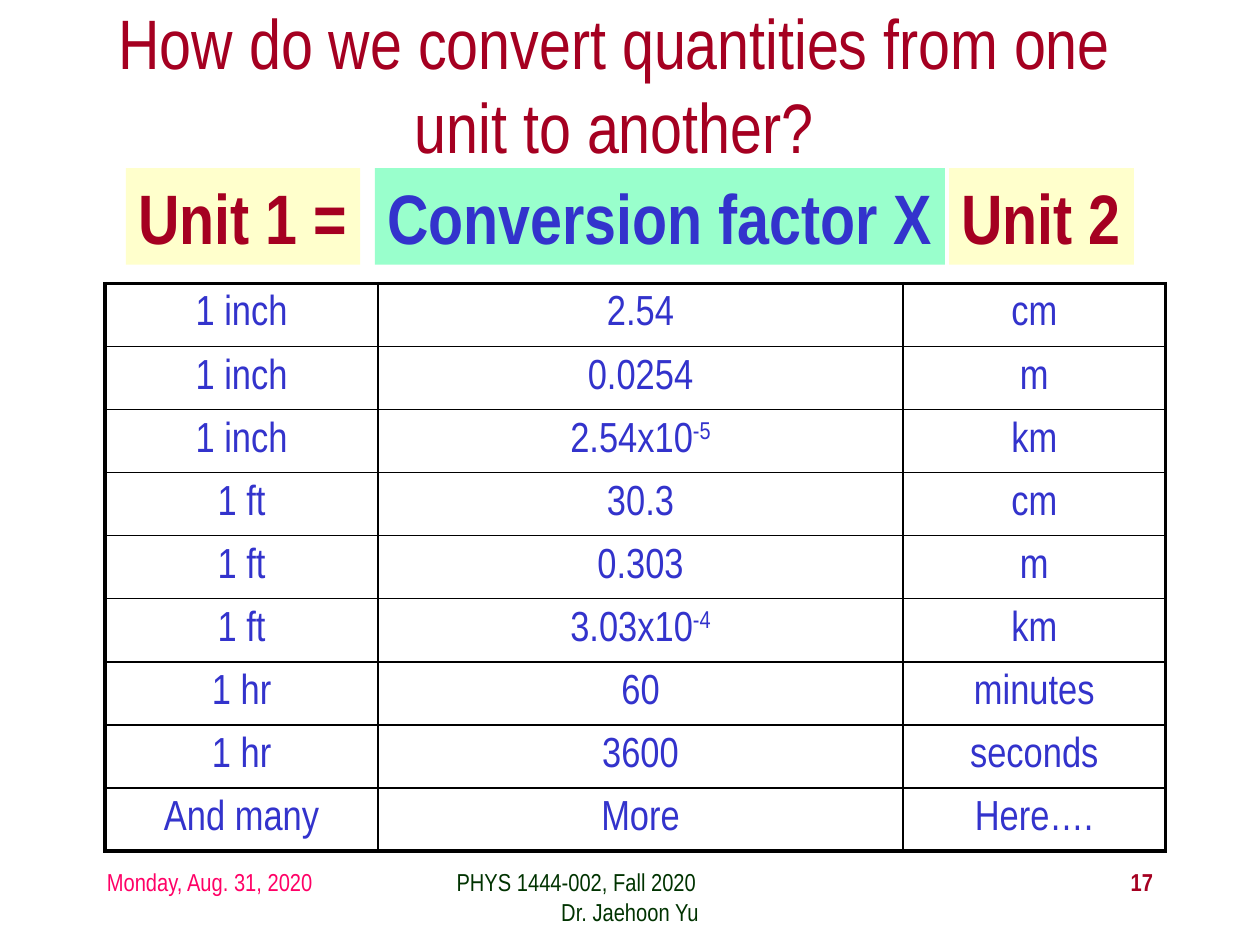
from dataclasses import dataclass

import lxml.etree
import pptx
import pptx.dml.color
import pptx.enum.shapes
import pptx.enum.text
import pptx.oxml.ns
import pptx.util

EMU_PER_PX = 7620
FONT = "Arial Narrow"
ALIGN = pptx.enum.text.PP_ALIGN
ANCHOR = pptx.enum.text.MSO_ANCHOR
AUTO_SIZE = pptx.enum.text.MSO_AUTO_SIZE
COLORS = {
    "red": "A50021",
    "blue": "3333CC",
    "pink": "FF0066",
    "green": "003300",
    "cream": "FFFFCC",
    "mint": "99FFCC",
    "black": "000000",
}


@dataclass(frozen=True)
class Frame:
    left: int
    top: int
    width: int
    height: int


@dataclass(frozen=True)
class Line:
    text: str
    align: ALIGN = ALIGN.LEFT
    indent: int = 0


@dataclass(frozen=True)
class FooterText:
    frame: Frame
    lines: tuple[Line, ...]
    color: str
    bold: bool = False


@dataclass(frozen=True)
class FormulaBox:
    text: str
    left: int
    width: int
    fill: str
    color: str


@dataclass(frozen=True)
class Conversion:
    unit: str
    factor: str
    target: str
    exponent: str = ""


FOOTER = (
    FooterText(Frame(90, 820, 250, 60), (Line("Monday, Aug. 31, 2020"),), "pink"),
    FooterText(
        Frame(410, 820, 380, 60),
        (
            Line("PHYS 1444-002, Fall 2020", indent=13),
            Line("Dr. Jaehoon Yu", ALIGN.CENTER),
        ),
        "green",
    ),
    FooterText(Frame(860, 820, 250, 60), (Line("17", ALIGN.RIGHT),), "red", True),
)
FORMULA = (
    FormulaBox("Unit 1 =", 120, 223, "cream", "red"),
    FormulaBox("Unit 2", 904, 176, "cream", "red"),
    FormulaBox("Conversion factor X", 357, 543, "mint", "blue"),
)
CONVERSIONS = (
    Conversion("1 inch", "2.54", "cm"),
    Conversion("1 inch", "0.0254", "m"),
    Conversion("1 inch", "2.54x10", "km", "-5"),
    Conversion("1 ft", "30.3", "cm"),
    Conversion("1 ft", "0.303", "m"),
    Conversion("1 ft", "3.03x10", "km", "-4"),
    Conversion("1 hr", "60", "minutes"),
    Conversion("1 hr", "3600", "seconds"),
    Conversion("And many", "More", "Here…."),
)
COLUMN_WIDTHS = (260, 500, 250)
ROW_HEIGHT = 60


def px(length: int) -> pptx.util.Emu:
    return pptx.util.Emu(length * EMU_PER_PX)


def rgb(color: str) -> pptx.dml.color.RGBColor:
    return pptx.dml.color.RGBColor.from_string(COLORS[color])


def box(frame: Frame) -> tuple:
    return px(frame.left), px(frame.top), px(frame.width), px(frame.height)


def apply(target, values: dict) -> None:
    for name, value in values.items():
        setattr(target, name, value)


def add_run(paragraph, text: str, size: int, color: str, bold: bool = False):
    run = paragraph.add_run()
    run.text = text
    apply(run.font, {"name": FONT, "size": pptx.util.Pt(size), "bold": bold})
    run.font.color.rgb = rgb(color)
    return run


def add_title(slide, text: str, frame: Frame) -> None:
    title = slide.shapes.title
    apply(title, dict(zip(("left", "top", "width", "height"), box(frame))))
    apply(
        title.text_frame,
        {"word_wrap": True, "auto_size": AUTO_SIZE.NONE, "vertical_anchor": ANCHOR.MIDDLE},
    )
    paragraph = title.text_frame.paragraphs[0]
    paragraph.alignment = ALIGN.CENTER
    add_run(paragraph, text, 40, "red")


def add_footer(slide, footer: FooterText) -> None:
    text_frame = slide.shapes.add_textbox(*box(footer.frame)).text_frame
    text_frame.word_wrap = True
    for index, line in enumerate(footer.lines):
        paragraph = text_frame.add_paragraph() if index else text_frame.paragraphs[0]
        paragraph.alignment = line.align
        if line.indent:
            paragraph._p.get_or_add_pPr().set("marL", str(px(line.indent)))
        add_run(paragraph, line.text, 14, footer.color, footer.bold)


def add_formula_box(slide, item: FormulaBox) -> None:
    shape = slide.shapes.add_shape(
        pptx.enum.shapes.MSO_SHAPE.RECTANGLE, *box(Frame(item.left, 160, item.width, 92))
    )
    shape.shadow.inherit = False
    shape.fill.solid()
    shape.fill.fore_color.rgb = rgb(item.fill)
    shape.line.fill.background()
    apply(
        shape.text_frame,
        {
            "word_wrap": False,
            "auto_size": AUTO_SIZE.SHAPE_TO_FIT_TEXT,
            "vertical_anchor": ANCHOR.TOP,
        },
    )
    paragraph = shape.text_frame.paragraphs[0]
    paragraph.alignment = ALIGN.LEFT
    add_run(paragraph, item.text, 40, item.color, True)


def set_borders(cell, outer_sides: dict[str, bool]) -> None:
    properties = cell._tc.get_or_add_tcPr()
    qn = pptx.oxml.ns.qn
    for side, outer in outer_sides.items():
        width = pptx.util.Pt(2.25 if outer else 1)
        line = lxml.etree.SubElement(properties, qn(f"a:ln{side}"), w=str(width))
        fill = lxml.etree.SubElement(line, qn("a:solidFill"))
        lxml.etree.SubElement(fill, qn("a:srgbClr"), val=COLORS["black"])


def add_conversion_table(slide) -> None:
    row_count, column_count = len(CONVERSIONS), len(COLUMN_WIDTHS)
    frame = Frame(100, 270, sum(COLUMN_WIDTHS), ROW_HEIGHT * row_count)
    table = slide.shapes.add_table(row_count, column_count, *box(frame)).table
    apply(table, {"first_row": False, "horz_banding": False})
    for column, width in zip(table.columns, COLUMN_WIDTHS):
        column.width = px(width)
    for row, conversion in enumerate(CONVERSIONS):
        table.rows[row].height = px(ROW_HEIGHT)
        texts = (conversion.unit, conversion.factor, conversion.target)
        for column, text in enumerate(texts):
            cell = table.cell(row, column)
            outer_sides = {
                "L": column == 0,
                "R": column == column_count - 1,
                "T": row == 0,
                "B": row == row_count - 1,
            }
            set_borders(cell, outer_sides)
            cell.fill.background()
            cell.vertical_anchor = ANCHOR.MIDDLE
            paragraph = cell.text_frame.paragraphs[0]
            paragraph.alignment = ALIGN.CENTER
            add_run(paragraph, text, 24, "blue")
            if column == 1 and conversion.exponent:
                exponent = add_run(paragraph, conversion.exponent, 24, "blue")
                exponent._r.get_or_add_rPr().set("baseline", "30000")


def main() -> None:
    presentation = pptx.Presentation()
    apply(presentation, {"slide_width": px(1200), "slide_height": px(900)})
    slide = presentation.slides.add_slide(presentation.slide_layouts.get_by_name("Title Only"))
    title = "How do we convert quantities from one unit to another?"
    add_title(slide, title, Frame(90, 0, 990, 160))
    for footer in FOOTER:
        add_footer(slide, footer)
    for item in FORMULA:
        add_formula_box(slide, item)
    add_conversion_table(slide)
    presentation.save("out.pptx")


if __name__ == "__main__":
    main()
